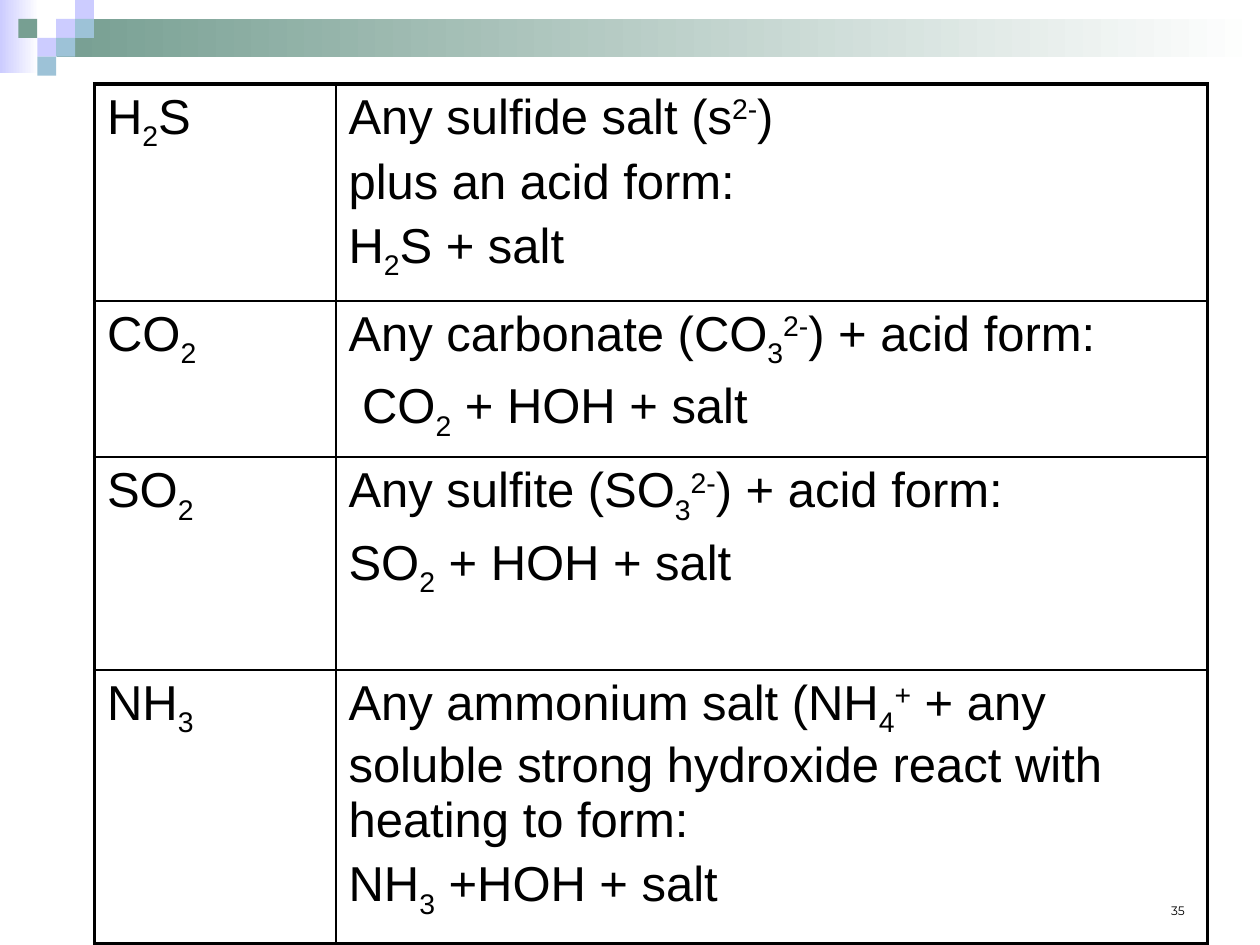
from lxml.etree import SubElement
from pptx import Presentation
from pptx.dml.color import RGBColor
from pptx.enum.shapes import MSO_SHAPE
from pptx.enum.text import MSO_ANCHOR, PP_ALIGN
from pptx.oxml.ns import qn
from pptx.util import Pt

COLORS = {"lilac": "CCCCFF", "green": "779F92", "blue": "9DC2D7",
          "white": "FFFFFF", "black": "000000"}
RGB = {name: RGBColor.from_string(value) for name, value in COLORS.items()}
BASELINES = {"_": "-25000", "^": "30000"}
THIN, THICK = Pt(1), Pt(2.25)

prs = Presentation()
prs.slide_width, prs.slide_height = Pt(720), Pt(540)
slide = prs.slides.add_slide(prs.slide_layouts[6])


def add_block(left, top, width, height, color, fade=False):
    """Add a borderless rectangle, solid or fading to white at the right."""
    sp = slide.shapes.add_shape(MSO_SHAPE.RECTANGLE, Pt(left), Pt(top), Pt(width), Pt(height))
    sp.shadow.inherit = False
    sp.line.fill.background()
    if fade:
        sp.fill.gradient()
        sp.fill.gradient_angle = 0
        for stop, name, position in zip(sp.fill.gradient_stops, (color, "white"), (0, 1)):
            stop.color.rgb = RGB[name]
            stop.position = position
    else:
        sp.fill.solid()
        sp.fill.fore_color.rgb = RGB[color]


def add_formula(p, text):
    """Write runs split at |, where _ starts a subscript and ^ a superscript."""
    for part in text.split("|"):
        r = p.add_run()
        r.text = part.lstrip("_^")
        r.font.name, r.font.size = "Arial", Pt(28)
        r.font.color.rgb = RGB["black"]
        if part[0] in BASELINES:
            r.font._element.set("baseline", BASELINES[part[0]])


# Header band and mosaic
add_block(0, 0, 22.3, 41.8, "lilac", fade=True)
add_block(32.4, 10.8, 687.6, 21.6, "green", fade=True)
TILE = 10.8
for column, row, color in [(3, 1, "lilac"), (4, 0, "lilac"), (4, 1, "blue"),
                           (2, 2, "lilac"), (1, 1, "green"), (3, 2, "blue"),
                           (2, 3, "blue")]:
    add_block(column * TILE - 0.3, row * TILE, TILE, TILE, color)

# Slide number
box = slide.shapes.add_textbox(Pt(516), Pt(492), Pt(168), Pt(36))
tf = box.text_frame
tf.word_wrap = True
tf.vertical_anchor = MSO_ANCHOR.BOTTOM
p = tf.paragraphs[0]
p.text = "35"
p.alignment = PP_ALIGN.RIGHT
font = p.runs[0].font
font.name, font.size = "Montserrat", Pt(7)
font.color.rgb = RGB["black"]

# Table of gases and the reactions that form them
GASES = [
    ("H|_2|S", ["Any sulfide salt (s|^2-|)", "plus an acid form:", "H|_2|S + salt"]),
    ("CO|_2", ["Any carbonate (CO|_3|^2-|) + acid form:", " CO|_2| + HOH + salt"]),
    ("SO|_2", ["Any sulfite (SO|_3|^2-|) + acid form:", "SO|_2| + HOH + salt"]),
    ("NH|_3", ["Any ammonium salt (NH|_4|^+| + any soluble strong hydroxide "
               "react with heating to form:", "NH|_3| +HOH + salt"]),
]
ROW_HEIGHTS = [121.5, 84, 121.5, 148]
COLUMN_WIDTHS = [138, 498]

table = slide.shapes.add_table(len(GASES), 2, Pt(54), Pt(48),
                               Pt(sum(COLUMN_WIDTHS)), Pt(sum(ROW_HEIGHTS))).table
table.first_row = table.horz_banding = False
for column, width in zip(table.columns, COLUMN_WIDTHS):
    column.width = Pt(width)
for row, height in zip(table.rows, ROW_HEIGHTS):
    row.height = Pt(height)

last = len(GASES) - 1
for i, (gas, reaction) in enumerate(GASES):
    for j, lines in enumerate(([gas], reaction)):
        cell = table.cell(i, j)
        tf = cell.text_frame
        for n, line in enumerate(lines):
            p = tf.add_paragraph() if n else tf.paragraphs[0]
            if n:
                p.space_before = Pt(5.6)
            add_formula(p, line)
        tcPr = cell._tc.get_or_add_tcPr()
        outer_edges = {"a:lnL": j == 0, "a:lnR": j == 1, "a:lnT": i == 0, "a:lnB": i == last}
        for tag, outer in outer_edges.items():
            ln = SubElement(tcPr, qn(tag), w=str(THICK if outer else THIN))
            fill = SubElement(ln, qn("a:solidFill"))
            SubElement(fill, qn("a:srgbClr"), val=COLORS["black"])
        cell.fill.background()

prs.save("out.pptx")
